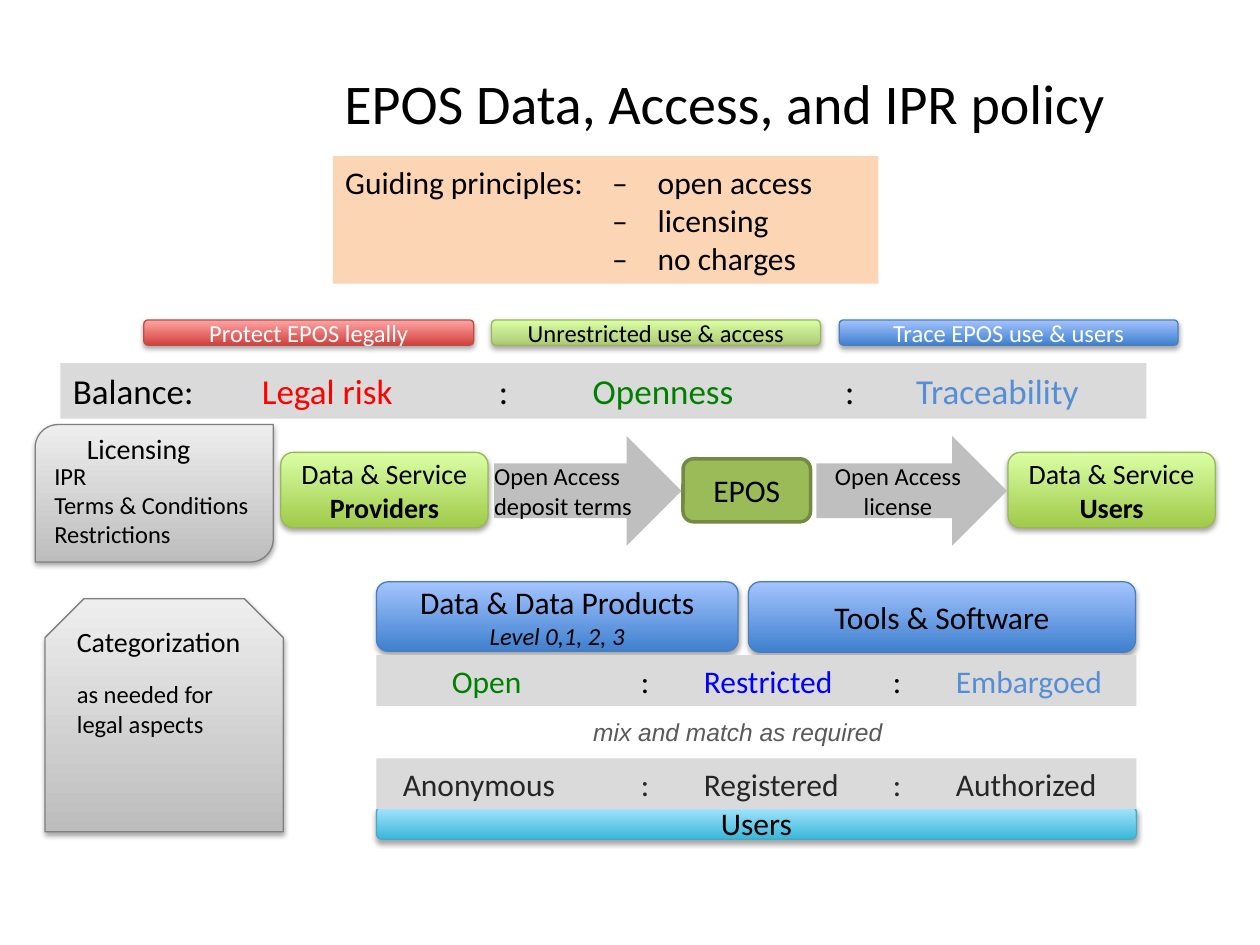
import pptx
import pptx.dml.color
import pptx.enum.shapes
import pptx.enum.text
import pptx.oxml
import pptx.oxml.ns
import pptx.util

Cm = pptx.util.Cm
Pt = pptx.util.Pt
RGB = pptx.dml.color.RGBColor.from_string
SHAPE = pptx.enum.shapes.MSO_SHAPE
ALIGN = pptx.enum.text.PP_ALIGN
ANCHOR = pptx.enum.text.MSO_ANCHOR
NS = pptx.oxml.ns.nsdecls("a")

COLORS = {
    "black": "000000", "white": "FFFFFF", "dark": "262626", "caption": "595959",
    "risk": "FF0000", "open": "008000", "restricted": "0000FF", "trace": "558ED5",
    "band": "DADADA", "arrow": "BFBFBF", "peach": "FCD5B5",
    "epos": "9BBB59", "epos line": "738A42",
}
# Bottom colour, top colour, outline
GRADIENTS = {
    "gray": ("BDBDBD", "EEEEEE", "808080"),
    "green": ("A0CA4A", "DAFFA5", "98B955"),
    "pale green": ("AEC976", "DAFFA5", "98B955"),
    "blue": ("3F80CE", "A4C4FF", "4B7EBC"),
    "red": ("D1403C", "FFA6A5", "BF4C48"),
    "cyan": ("39B7D8", "A7E6FF", "46AAC5"),
}


def write_text(shape, paragraphs, size=18, color="black", font="Calibri",
               align=ALIGN.CENTER, anchor=ANCHOR.MIDDLE, insets=(0.25, 0),
               wrap=True, tabs=()):
    """Each paragraph is a string or a list of (text, format overrides) runs."""
    frame = shape.text_frame
    frame.auto_size = pptx.enum.text.MSO_AUTO_SIZE.NONE
    frame.word_wrap = wrap
    frame.vertical_anchor = anchor
    frame.margin_left = frame.margin_right = Cm(insets[0])
    frame.margin_top = frame.margin_bottom = Cm(insets[1])
    for index, runs in enumerate(paragraphs):
        paragraph = frame.add_paragraph() if index else frame.paragraphs[0]
        paragraph.alignment = align
        if tabs:
            stops = "".join(f'<a:tab pos="{Cm(stop)}" algn="l"/>' for stop in tabs)
            paragraph._p.get_or_add_pPr().append(
                pptx.oxml.parse_xml(f"<a:tabLst {NS}>{stops}</a:tabLst>"))
        for text, changes in [(runs, {})] if isinstance(runs, str) else runs:
            run = paragraph.add_run()
            run.text = text
            run.font.name = font
            run.font.size = Pt(changes.get("size", size))
            run.font.bold = changes.get("bold", False)
            run.font.italic = changes.get("italic", False)
            run.font.color.rgb = RGB(COLORS[changes.get("color", color)])


def add_box(kind, left, top, width, height, fill, paragraphs, **text_format):
    """Add a shape with a plain fill, or a gradient, outline and shadow."""
    shape = slide.shapes.add_shape(kind, Cm(left), Cm(top), Cm(width), Cm(height))
    shape.shadow.inherit = False
    if fill in GRADIENTS:
        bottom, top_color, outline = GRADIENTS[fill]
        shape.fill.gradient()
        shape.fill.gradient_angle = 90
        for stop, stop_color in zip(shape.fill.gradient_stops, (bottom, top_color)):
            stop.color.rgb = RGB(stop_color)
        shape.line.color.rgb = RGB(outline)
        shape.line.width = Pt(0.75)
        effects = shape._element.spPr.find(pptx.oxml.ns.qn("a:effectLst"))
        effects.append(pptx.oxml.parse_xml(
            f'<a:outerShdw {NS} blurRad="{Pt(3.1)}" dist="{Pt(1.7)}" dir="5400000"'
            ' rotWithShape="0"><a:srgbClr val="000000"><a:alpha val="35000"/>'
            "</a:srgbClr></a:outerShdw>"))
    else:
        shape.fill.solid()
        shape.fill.fore_color.rgb = RGB(COLORS[fill])
        shape.line.fill.background()
    write_text(shape, paragraphs, **text_format)
    return shape


presentation = pptx.Presentation()
presentation.slide_width, presentation.slide_height = Cm(25.4), Cm(19.05)
slide = presentation.slides.add_slide(presentation.slide_layouts[5])

title = slide.shapes.title
title.left, title.top, title.width, title.height = Cm(1.9), Cm(0.81), Cm(25.43), Cm(2.51)
write_text(title, ["EPOS Data, Access, and IPR policy"], size=32)

left_text = {"align": ALIGN.LEFT, "insets": (0.25, 0.13)}

# Licensing flow from providers to users
add_box(SHAPE.ROUND_2_DIAG_RECTANGLE, 0.71, 8.56, 4.8, 2.77, "gray",
        ["IPR", "Terms & Conditions", "Restrictions"],
        size=14, anchor=ANCHOR.BOTTOM, **left_text)
licensing = slide.shapes.add_textbox(Cm(1.5), Cm(8.56), Cm(2.62), Cm(0.94))
write_text(licensing, ["Licensing"], size=16, wrap=False, **left_text)

for left, role in ((5.66, "Providers"), (20.32, "Users")):
    add_box(SHAPE.ROUNDED_RECTANGLE, left, 9.12, 4.18, 1.52, "green",
            ["Data & Service", [(role, {"bold": True})]], size=16)
epos = add_box(SHAPE.ROUNDED_RECTANGLE, 13.77, 9.25, 2.57, 1.27, "epos", ["EPOS"])
epos.line.color.rgb = RGB(COLORS["epos line"])
epos.line.width = Pt(2)
add_box(SHAPE.RIGHT_ARROW, 9.96, 8.79, 3.78, 2.21, "arrow",
        ["Open Access", "deposit terms"], size=14, align=ALIGN.LEFT, insets=(0, 0.13))
add_box(SHAPE.RIGHT_ARROW, 16.46, 8.79, 3.84, 2.21, "arrow",
        ["Open Access license"], size=14, insets=(0.25, 0.13))

# Categories of data and users
add_box(SHAPE.ROUNDED_RECTANGLE, 7.59, 11.73, 7.29, 1.4, "blue",
        ["Data & Data Products", [("Level 0,1, 2, 3", {"size": 14, "italic": True})]],
        insets=(0.25, 0.05))
add_box(SHAPE.ROUNDED_RECTANGLE, 15.09, 11.73, 7.8, 1.42, "blue", ["Tools & Software"])
category_tabs = (5.08, 6.35, 10.16, 11.43)
add_box(SHAPE.RECTANGLE, 7.59, 13.21, 15.32, 1.02, "band",
        [[("\tOpen", {"color": "open"}), ("\t:", {}),
          ("\tRestricted", {"color": "restricted"}), ("\t:", {}),
          ("\tEmbargoed", {"color": "trace"})]],
        tabs=(1.27, *category_tabs), **left_text)
categorization = add_box(
    SHAPE.SNIP_2_SAME_RECTANGLE, 0.91, 12.07, 4.8, 4.7, "gray",
    ["Categorization", [("as needed for legal aspects", {"size": 14})]],
    size=16, anchor=ANCHOR.TOP, **left_text)
categorization.text_frame.paragraphs[1].space_before = Pt(12)
add_box(SHAPE.ROUNDED_RECTANGLE, 7.59, 16.26, 15.32, 0.66, "cyan", ["Users"])
add_box(SHAPE.RECTANGLE, 7.59, 15.29, 15.32, 1.02, "band",
        ["\tAnonymous\t:\tRegistered\t:\tAuthorized"],
        color="dark", tabs=(0.28, *category_tabs), **left_text)
mix = slide.shapes.add_textbox(Cm(11.71), Cm(14.33), Cm(6.4), Cm(0.86))
write_text(mix, [[("mix and match as required", {"italic": True})]],
           size=14, font="Arial", color="caption", **left_text)

# Guiding principles and the balance between them
add_box(SHAPE.RECTANGLE, 6.71, 3.15, 11, 2.57, "peach",
        ["Guiding principles:\t–\topen access", "\t–\tlicensing", "\t–\tno charges"],
        tabs=(5.38, 6.3), **left_text)
add_box(SHAPE.RECTANGLE, 1.22, 7.32, 21.89, 1.12, "band",
        [[("Balance:", {}), ("\tLegal risk", {"color": "risk"}), ("\t:", {}),
          ("\tOpenness", {"color": "open"}), ("\t:", {}),
          ("\tTraceability", {"color": "trace"})]],
        size=20, tabs=(3.81, 8.59, 10.48, 15.57, 17), **left_text)
for left, width, fill, color, goal in (
        (2.9, 6.65, "red", "white", "Protect EPOS legally"),
        (9.91, 6.63, "pale green", "black", "Unrestricted use & access"),
        (16.92, 6.83, "blue", "white", "Trace EPOS use & users")):
    add_box(SHAPE.ROUNDED_RECTANGLE, left, 6.45, width, 0.51, fill, [goal],
            size=14, color=color)

presentation.save("out.pptx")
